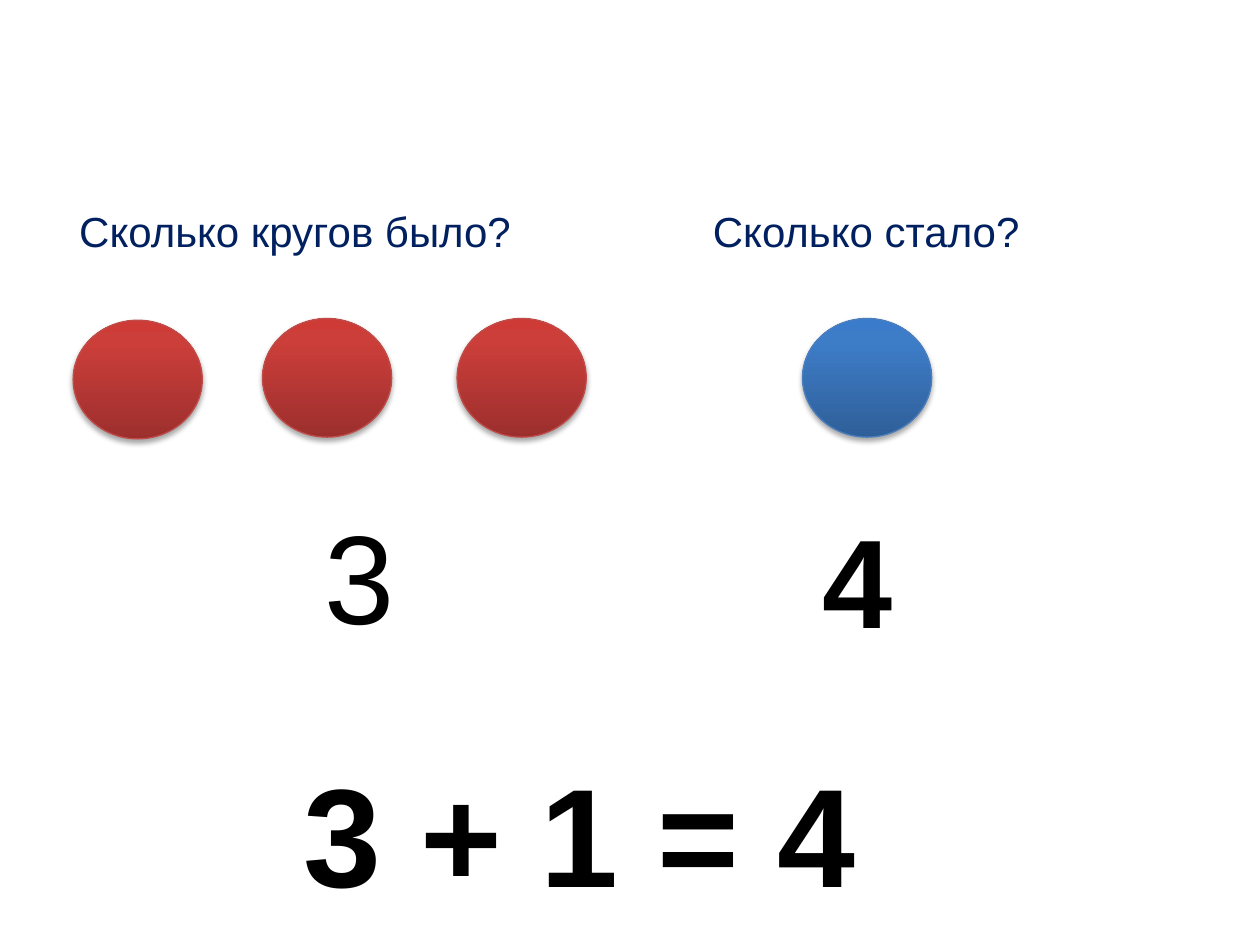
from copy import deepcopy

from lxml.etree import SubElement
from pptx import Presentation
from pptx.dml.color import RGBColor as RGB
from pptx.enum.shapes import MSO_SHAPE as Shape
from pptx.enum.text import MSO_AUTO_SIZE as AutoSize, PP_ALIGN as Align
from pptx.oxml.ns import qn
from pptx.util import Pt

THEME = {
    "font": "Arial",
    "question": {"size": Pt(24), "color": "002060", "bold": False},
    "count": {"size": Pt(72), "color": "000000", "bold": False},
    "answer": {"size": Pt(72), "color": "000000", "bold": True},
    "equation": {"size": Pt(80), "color": "000000", "bold": True},
    "red": {"stops": ("9C2F2D", "CB3E3A", "CE3B37"), "line": "BF4C48"},
    "blue": {"stops": ("2F5F99", "3D7CC7", "3A7CCB"), "line": "4B7EBC"},
    "shadow": "000000",
}
STOP_POSITIONS = (0, 0.8, 1)
CIRCLE_SIZE = (73.8, 67.8)

# Text, style, (left, top, width, height), alignment, wrap
TEXTS = [
    ("Сколько кругов было?", "question", (38.2, 113.8, 280.8, 36), Align.LEFT, True),
    ("Сколько стало?", "question", (400.3, 113.8, 220.3, 36), Align.LEFT, True),
    ("3", "count", (178.6, 281.5, 54.7, 94.3), Align.LEFT, False),
    ("4", "answer", (463, 283.7, 50.4, 94.3), Align.LEFT, True),
    ("3 + 1 = 4", "equation", (93.6, 423.4, 475.9, 104.4), Align.CENTER, True),
]
RED_CIRCLES = [(41.8, 183), (150, 182), (261.2, 182)]
BLUE_CIRCLE = (458.6, 182)


def add_text(slide, text, style, box, alignment, wrap):
    frame = slide.shapes.add_textbox(*map(Pt, box)).text_frame
    frame.word_wrap = wrap
    frame.auto_size = AutoSize.SHAPE_TO_FIT_TEXT
    paragraph = frame.paragraphs[0]
    paragraph.alignment = alignment
    run = paragraph.add_run()
    run.text = text
    values = THEME[style]
    for name, value in {"name": THEME["font"], "size": values["size"],
                        "bold": values["bold"]}.items():
        setattr(run.font, name, value)
    run.font.color.rgb = RGB.from_string(values["color"])


def add_shadow(shape):
    """Give the shape a soft shadow straight below it."""
    shape.shadow.inherit = False
    effects = shape._element.spPr.find(qn("a:effectLst"))
    shadow = SubElement(effects, qn("a:outerShdw"), blurRad=str(Pt(3.15)),
                        dist=str(Pt(1.8)), dir="5400000", rotWithShape="0")
    color = SubElement(shadow, qn("a:srgbClr"), val=THEME["shadow"])
    SubElement(color, qn("a:alpha"), val="35000")


def add_circle(shapes, position, style):
    circle = shapes.add_shape(Shape.OVAL, *map(Pt, position + CIRCLE_SIZE))
    colors = THEME[style]
    circle.fill.gradient()
    circle.fill.gradient_angle = 90
    stop_list = circle._element.spPr.find(".//" + qn("a:gsLst"))
    stop_list.append(deepcopy(stop_list[-1]))
    for stop, color, place in zip(circle.fill.gradient_stops, colors["stops"],
                                  STOP_POSITIONS):
        stop.color.rgb = RGB.from_string(color)
        stop.position = place
    circle.line.color.rgb = RGB.from_string(colors["line"])
    circle.line.width = Pt(0.75)
    add_shadow(circle)


def main():
    presentation = Presentation()
    presentation.slide_width, presentation.slide_height = Pt(720), Pt(540)
    slide = presentation.slides.add_slide(presentation.slide_layouts[6])
    for entry in TEXTS[:2]:
        add_text(slide, *entry)
    red_group = slide.shapes.add_group_shape()
    for position in RED_CIRCLES:
        add_circle(red_group.shapes, position, "red")
    add_circle(slide.shapes, BLUE_CIRCLE, "blue")
    for entry in TEXTS[2:]:
        add_text(slide, *entry)
    presentation.save("out.pptx")


if __name__ == "__main__":
    main()
